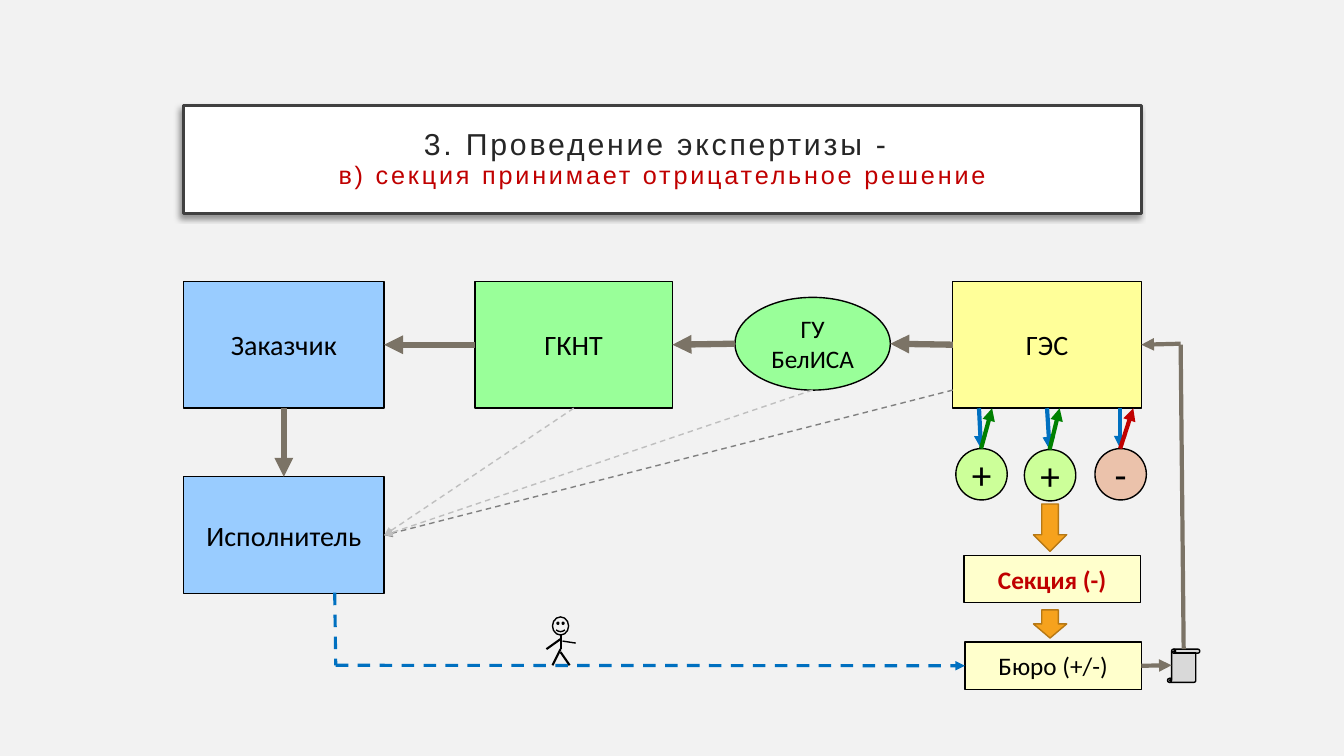
from lxml.etree import SubElement
from pptx import Presentation
from pptx.dml.color import RGBColor
from pptx.enum.dml import MSO_LINE
from pptx.enum.shapes import MSO_CONNECTOR, MSO_SHAPE
from pptx.enum.text import MSO_ANCHOR, PP_ALIGN
from pptx.oxml.ns import qn
from pptx.util import Inches, Pt

BACKGROUND = RGBColor(0xF2, 0xF2, 0xF2)
WHITE = RGBColor(0xFF, 0xFF, 0xFF)
BLACK = RGBColor(0x00, 0x00, 0x00)
CHARCOAL = RGBColor(0x40, 0x40, 0x40)
TITLE_TEXT = RGBColor(0x26, 0x26, 0x26)
RED = RGBColor(0xC0, 0x00, 0x00)
SKY = RGBColor(0x99, 0xCC, 0xFF)
GREEN = RGBColor(0x99, 0xFF, 0x99)
YELLOW = RGBColor(0xFF, 0xFF, 0x99)
CREAM = RGBColor(0xFF, 0xFF, 0xCC)
LIME = RGBColor(0xCC, 0xFF, 0x99)
PEACH = RGBColor(0xEB, 0xC2, 0xAB)
ORANGE = RGBColor(0xF6, 0xA2, 0x1D)
DARK_ORANGE = RGBColor(0xB6, 0x78, 0x15)
TAUPE = RGBColor(0x7B, 0x73, 0x66)
BLUE = RGBColor(0x00, 0x70, 0xC0)
DARK_GREEN = RGBColor(0x00, 0x80, 0x00)
GRAY = RGBColor(0x80, 0x80, 0x80)
SILVER = RGBColor(0xBF, 0xBF, 0xBF)
PALE_GRAY = RGBColor(0xD9, 0xD9, 0xD9)

TOP, LEFT, BOTTOM, RIGHT = range(4)


def set_margins(text_frame, margin):
    """Give all four sides of a text frame the same margin."""
    text_frame.margin_left = text_frame.margin_right = margin
    text_frame.margin_top = text_frame.margin_bottom = margin


def place(shape, box):
    """Move a shape to a left, top, width, height box in inches."""
    shape.left, shape.top, shape.width, shape.height = map(Inches, box)


def add_title_shadow(title):
    """Put a soft shadow below and to the left of the title."""
    effects = SubElement(title._element.spPr, qn("a:effectLst"))
    shadow = SubElement(effects, qn("a:outerShdw"), blurRad=str(Pt(4)),
                        dist=str(Pt(3)), dir=str(135 * 60000))
    color = SubElement(shadow, qn("a:srgbClr"), val=str(BLACK))
    SubElement(color, qn("a:alpha"), val="40000")


def format_title(title):
    """Fill and format the framed two-line title."""
    place(title, (1.82, 1.05, 9.5, 1.07))
    title.fill.solid()
    title.fill.fore_color.rgb = WHITE
    title.line.color.rgb = CHARCOAL
    title.line.width = Pt(2.25)
    add_title_shadow(title)
    frame = title.text_frame
    frame.text = "3. Проведение экспертизы - \vв) секция принимает отрицательное решение"
    frame.word_wrap = True
    frame.vertical_anchor = MSO_ANCHOR.MIDDLE
    set_margins(frame, Inches(0.2))
    paragraph = frame.paragraphs[0]
    paragraph.alignment = PP_ALIGN.CENTER
    paragraph.line_spacing = 0.9
    for run, size, color in zip(paragraph.runs, (21.6, 18), (TITLE_TEXT, RED)):
        run.font.name = "Arial"
        run.font.size = Pt(size)
        run.font.color.rgb = color
        run.font._element.set("spc", "200")


def add_figure(slide, kind, box, fill=None, line=BLACK):
    """Add a preset shape with a thin outline."""
    shape = slide.shapes.add_shape(kind, *map(Inches, box))
    shape.shadow.inherit = False
    if fill is None:
        shape.fill.background()
    else:
        shape.fill.solid()
        shape.fill.fore_color.rgb = fill
    shape.line.color.rgb = line
    shape.line.width = Pt(1)
    return shape


def add_node(slide, text, box, fill, size=20, color=BLACK, bold=False,
             kind=MSO_SHAPE.RECTANGLE):
    """Add a shape with centred text."""
    shape = add_figure(slide, kind, box, fill)
    frame = shape.text_frame
    frame.text = text
    frame.word_wrap = True
    frame.vertical_anchor = MSO_ANCHOR.MIDDLE
    paragraph = frame.paragraphs[0]
    paragraph.alignment = PP_ALIGN.CENTER
    font = paragraph.runs[0].font
    font.name = "Calibri"
    font.size = Pt(size)
    font.bold = bold
    font.color.rgb = color
    return shape


def add_line(slide, start, end, color, width, arrow=True, dashed=False):
    """Join two ends, each a point in inches or a shape with its side."""
    connector = slide.shapes.add_connector(MSO_CONNECTOR.STRAIGHT, 0, 0, 0, 0)
    if isinstance(start[0], (int, float)):
        connector.begin_x, connector.begin_y = map(Inches, start)
    else:
        connector.begin_connect(*start)
    if isinstance(end[0], (int, float)):
        connector.end_x, connector.end_y = map(Inches, end)
    else:
        connector.end_connect(*end)
    connector.line.color.rgb = color
    connector.line.width = Pt(width)
    if dashed:
        connector.line.dash_style = MSO_LINE.DASH
    properties = connector._element.spPr
    if arrow:
        SubElement(properties.find(qn("a:ln")), qn("a:tailEnd"), type="triangle")
    SubElement(properties, qn("a:effectLst"))


def add_messenger(slide):
    """Draw the small stick figure on the dashed route."""
    add_figure(slide, MSO_SHAPE.SMILEY_FACE, (5.48, 6.12, 0.16, 0.18))
    limbs = [((5.56, 6.3), (5.56, 6.44), 1.5), ((5.56, 6.44), (5.48, 6.6), 1.5),
             ((5.56, 6.47), (5.65, 6.6), 1.5), ((5.56, 6.34), (5.42, 6.44), 1.5),
             ((5.58, 6.36), (5.71, 6.38), 1)]
    for start, end, width in limbs:
        add_line(slide, start, end, BLACK, width, arrow=False)


def add_experts(slide, council):
    """Add the expert votes with their request and reply arrows."""
    experts = [("+", 9.73, 4.45, LIME, (9.71, 4.05), 9.84, DARK_GREEN),
               ("+", 10.41, 4.46, LIME, (council, BOTTOM), 10.51, DARK_GREEN),
               ("-", 11.11, 4.45, PEACH, (11.11, 4.05), 11.24, RED)]
    for vote, center, top, fill, request, reply, color in experts:
        circle = add_node(slide, vote, (center - 0.25, top, 0.51, 0.51), fill, 28,
                          kind=MSO_SHAPE.OVAL)
        set_margins(circle.text_frame, 0)
        add_line(slide, request, (center, top), BLUE, 3)
        add_line(slide, (center, top), (reply, 4.05), color, 3)


def main():
    """Build the slide and save it."""
    presentation = Presentation()
    presentation.slide_width = Inches(13.33)
    presentation.slide_height = Inches(7.5)
    slide = presentation.slides.add_slide(presentation.slide_layouts[5])
    slide.background.fill.solid()
    slide.background.fill.fore_color.rgb = BACKGROUND
    format_title(slide.shapes.title)

    customer = add_node(slide, "Заказчик", (1.82, 2.79, 1.99, 1.26), SKY)
    committee = add_node(slide, "ГКНТ", (4.71, 2.79, 1.96, 1.26), GREEN)
    contractor = add_node(slide, "Исполнитель", (1.82, 4.73, 1.99, 1.16), SKY)
    add_node(slide, "ГУ БелИСА", (7.29, 2.95, 1.54, 0.92), GREEN, 18,
             kind=MSO_SHAPE.OVAL)
    council = add_node(slide, "ГЭС", (9.45, 2.79, 1.87, 1.26), YELLOW)
    add_node(slide, "Секция (-)", (9.56, 5.51, 1.75, 0.47), CREAM, 18, RED, True)
    bureau = add_node(slide, "Бюро (+/-)", (9.57, 6.37, 1.75, 0.47), CREAM, 18)
    for top, height in ((5, 0.47), (6.05, 0.28)):
        arrow = add_figure(slide, MSO_SHAPE.DOWN_ARROW, (10.25, top, 0.33, height),
                           ORANGE, DARK_ORANGE)
    add_figure(slide, MSO_SHAPE.VERTICAL_SCROLL, (11.58, 6.44, 0.32, 0.33), PALE_GRAY)

    add_line(slide, (council, LEFT), (8.83, 3.41), TAUPE, 4.5)
    add_line(slide, (7.29, 3.41), (committee, RIGHT), TAUPE, 4.5)
    add_line(slide, (committee, LEFT), (customer, RIGHT), TAUPE, 4.5)
    add_line(slide, (customer, BOTTOM), (contractor, TOP), TAUPE, 4.5)
    add_line(slide, (bureau, RIGHT), (11.62, 6.6), TAUPE, 3)
    add_line(slide, (11.74, 6.44), (11.71, 3.42), TAUPE, 3, arrow=False)
    add_line(slide, (11.71, 3.41), (council, RIGHT), TAUPE, 3)
    add_line(slide, (3.32, 5.88), (3.33, 6.6), BLUE, 2.25, arrow=False, dashed=True)
    add_line(slide, (3.33, 6.6), (bureau, LEFT), BLUE, 2.25, dashed=True)
    add_messenger(slide)
    for start, color in (((9.45, 3.87), GRAY), ((8.06, 3.87), SILVER),
                         ((committee, BOTTOM), SILVER)):
        add_line(slide, start, (contractor, RIGHT), color, 1, dashed=True)
    add_experts(slide, council)
    presentation.save("out.pptx")


if __name__ == "__main__":
    main()
